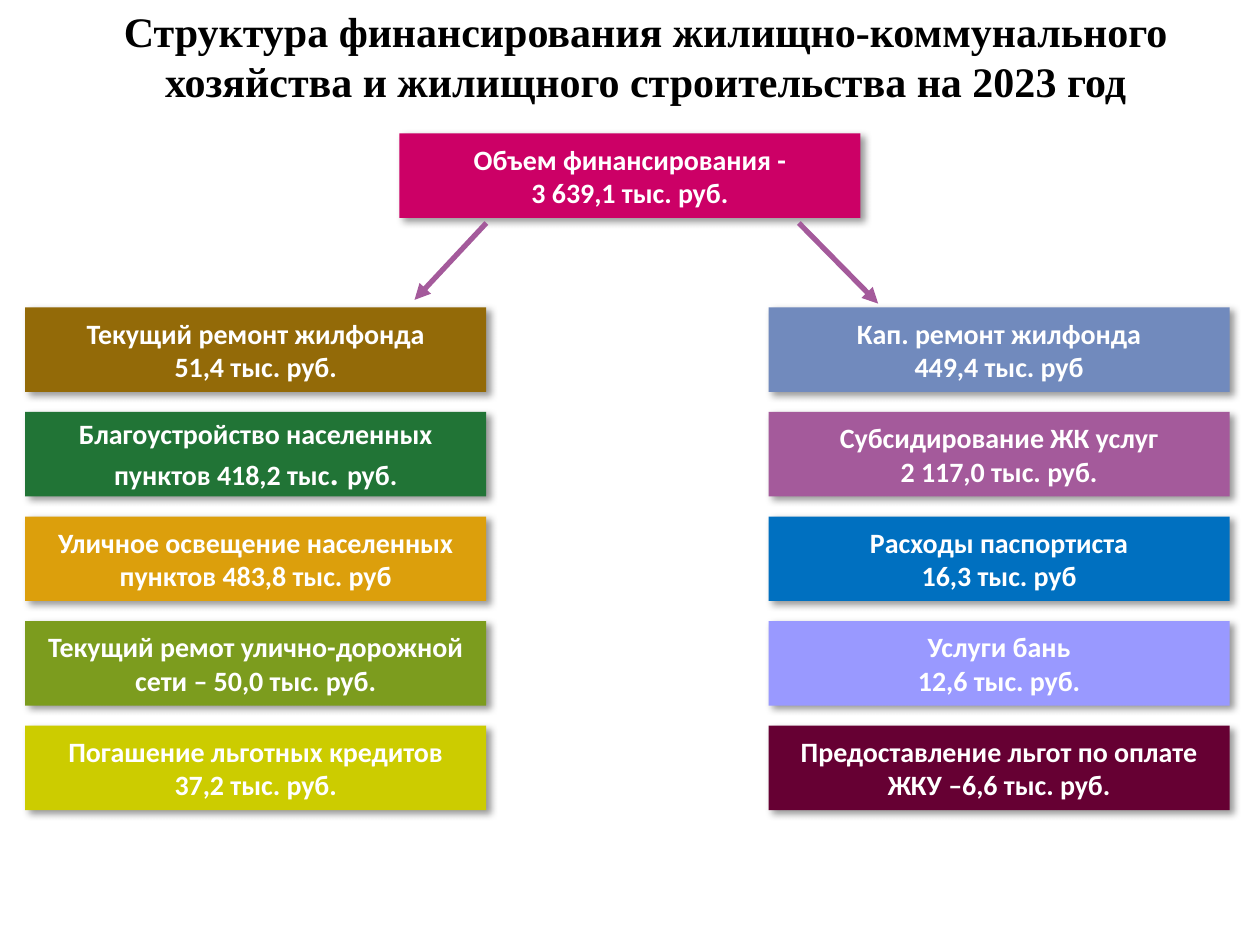
from lxml import etree
from pptx import Presentation
from pptx.dml.color import RGBColor
from pptx.enum import shapes as sh, text as tx
from pptx.oxml import ns
from pptx.util import Inches, Pt

WHITE = RGBColor(0xFF, 0xFF, 0xFF)
BLACK = RGBColor(0, 0, 0)
PLUM = RGBColor(0xA4, 0x5A, 0x9B)
ROSE = RGBColor(0xCC, 0x00, 0x66)
BROWN = RGBColor(0x93, 0x6A, 0x08)
GREEN = RGBColor(0x21, 0x74, 0x36)
GOLD = RGBColor(0xDC, 0x9F, 0x0C)
OLIVE = RGBColor(0x7C, 0x9C, 0x1E)
LIME = RGBColor(0xCC, 0xCC, 0x00)
STEEL = RGBColor(0x71, 0x8A, 0xBD)
BLUE = RGBColor(0x00, 0x70, 0xC0)
LILAC = RGBColor(0x99, 0x99, 0xFF)
WINE = RGBColor(0x66, 0x00, 0x33)

TITLE = "Структура финансирования жилищно-коммунального хозяйства и жилищного строительства на 2023 год"
TOTAL = (ROSE, ["Объем финансирования -", "3 639,1 тыс. руб."])
LEFT = [
    (BROWN, ["Текущий ремонт жилфонда", "51,4 тыс. руб."]),
    (GREEN, [[("Благоустройство населенных пунктов 418,2 тыс", 16), (". ", 20), ("руб.", 16)]]),
    (GOLD, ["Уличное освещение населенных", "пунктов 483,8 тыс. руб"]),
    (OLIVE, ["Текущий ремот улично-дорожной сети – 50,0 тыс. руб."]),
    (LIME, ["Погашение льготных кредитов", "37,2 тыс. руб."]),
]
RIGHT = [
    (STEEL, ["Кап. ремонт жилфонда", "449,4 тыс. руб"]),
    (PLUM, ["Субсидирование ЖК услуг", "2 117,0 тыс. руб."]),
    (BLUE, ["Расходы паспортиста", "16,3 тыс. руб"]),
    (LILAC, ["Услуги бань", "12,6 тыс. руб."]),
    (WINE, ["Предоставление льгот по оплате ЖКУ –6,6 тыс. руб."]),
]
ARROWS = [(3.86, 1.77, 3.29, 2.38), (6.34, 1.77, 6.97, 2.41)]
COLUMNS = [(0.2, LEFT), (6.1, RIGHT)]
WIDE, HIGH = 3.66, 0.67
TOP, STEP = 2.44, 0.83
HEAD = {"name": "Times New Roman", "size": Pt(24), "bold": True}
BODY = {"name": "Calibri", "bold": True}


def style(font, form, color):
    for key, val in form.items():
        setattr(font, key, val)
    font.color.rgb = color


def node(base, tag, **attrs):
    return etree.SubElement(base, ns.qn(tag), attrs)


def shade(props):
    list_ = node(props, "a:effectLst")
    drop = node(list_, "a:outerShdw", blurRad=str(Pt(4)), dist=str(Pt(3)),
                dir=str(40 * 60000), algn="tl", rotWithShape="0")
    node(node(drop, "a:srgbClr", val="000000"), "a:alpha", val="40000")


def add_box(slide, left, top, color, lines):
    box = slide.shapes.add_shape(sh.MSO_SHAPE.RECTANGLE, *map(Inches, (left, top, WIDE, HIGH)))
    box.fill.solid()
    box.fill.fore_color.rgb = color
    box.line.fill.background()
    shade(box._element.spPr)
    frame = box.text_frame
    frame.word_wrap = True
    frame.vertical_anchor = tx.MSO_ANCHOR.MIDDLE
    for i, line in enumerate(lines):
        par = frame.add_paragraph() if i else frame.paragraphs[0]
        par.alignment = tx.PP_ALIGN.CENTER
        for words, size in [(line, 16)] if isinstance(line, str) else line:
            run = par.add_run()
            run.text = words
            style(run.font, {**BODY, "size": Pt(size)}, WHITE)


def add_arrow(slide, ends):
    arrow = slide.shapes.add_connector(sh.MSO_CONNECTOR.STRAIGHT, *map(Inches, ends))
    arrow.line.color.rgb = PLUM
    arrow.line.width = Pt(3)
    node(arrow.line._get_or_add_ln(), "a:tailEnd", type="triangle")
    node(arrow._element.spPr, "a:effectLst")


def add_title(slide):
    title = slide.shapes.title
    title.left, title.top, title.width, title.height = map(Inches, (0.48, -0.01, 9.29, 0.91))
    frame = title.text_frame
    frame.text = TITLE
    frame.word_wrap = True
    frame.auto_size = tx.MSO_AUTO_SIZE.NONE
    frame.vertical_anchor = tx.MSO_ANCHOR.TOP
    par = frame.paragraphs[0]
    par.alignment = tx.PP_ALIGN.CENTER
    style(par.runs[0].font, HEAD, BLACK)


def main():
    deck = Presentation()
    deck.slide_width, deck.slide_height = Inches(10), Inches(7.5)
    slide = deck.slides.add_slide(deck.slide_layouts[5])
    add_title(slide)
    add_box(slide, (10 - WIDE) / 2, 1.06, *TOTAL)
    for left, items in COLUMNS:
        for row, item in enumerate(items):
            add_box(slide, left, TOP + row * STEP, *item)
    for ends in ARROWS:
        add_arrow(slide, ends)
    deck.save("out.pptx")


if __name__ == "__main__":
    main()
